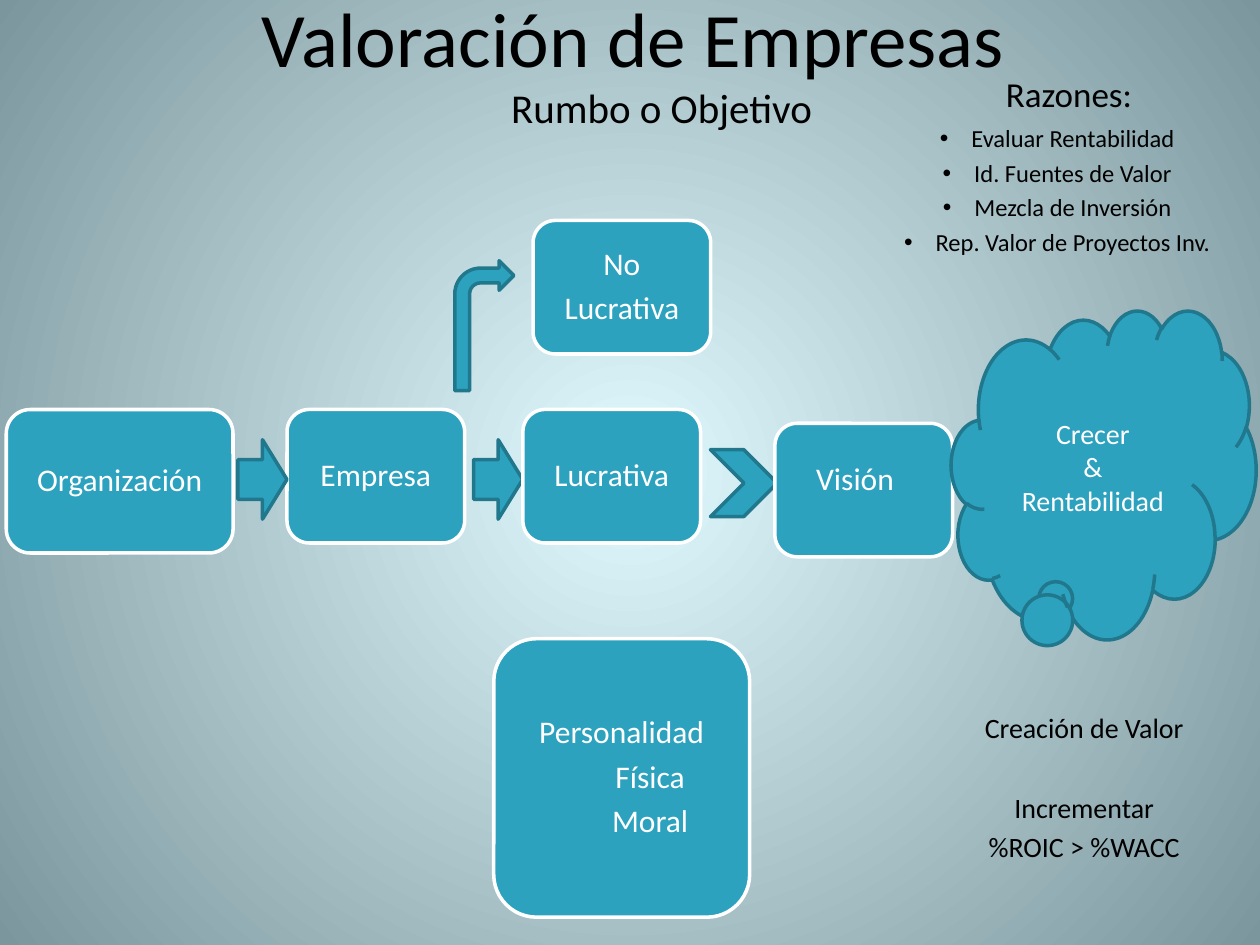
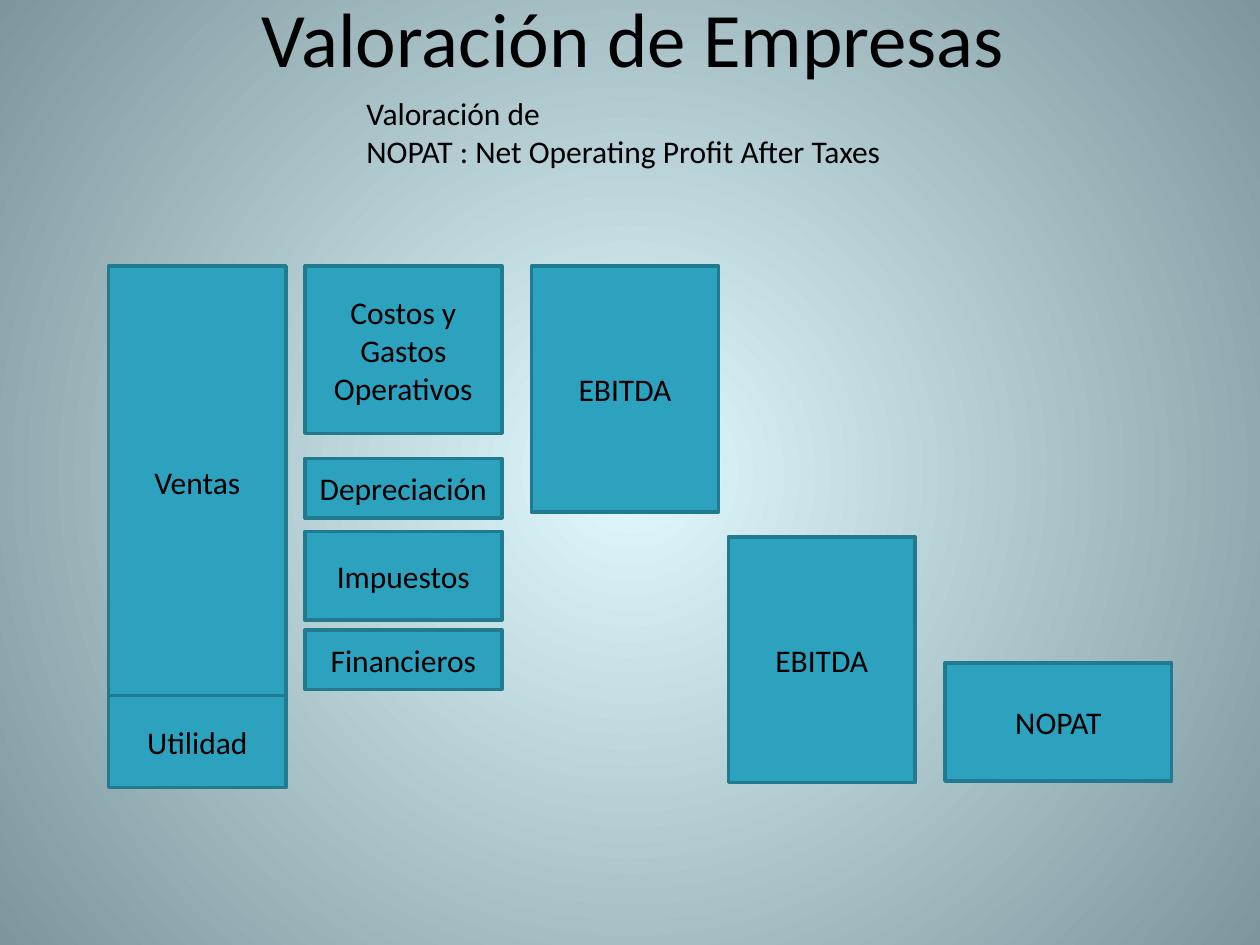
from pptx import Presentation
from pptx.dml.color import RGBColor
from pptx.enum.shapes import MSO_SHAPE
from pptx.enum.text import MSO_ANCHOR, PP_ALIGN
from pptx.oxml.ns import qn
from pptx.util import Pt
from lxml import etree

ROUND, RECT = MSO_SHAPE.ROUNDED_RECTANGLE, MSO_SHAPE.RECTANGLE
ARROW, BENT = MSO_SHAPE.RIGHT_ARROW, MSO_SHAPE.BENT_ARROW
CHEVRON, CLOUD = MSO_SHAPE.CHEVRON, MSO_SHAPE.CLOUD_CALLOUT
TOP, MIDDLE = MSO_ANCHOR.TOP, MSO_ANCHOR.MIDDLE
LEFT, CENTER = PP_ALIGN.LEFT, PP_ALIGN.CENTER
FONT = "Calibri"
HUES = {
    "glow": "E1FAFF", "edge": "7B969C", "teal": "2DA2BF",
    "rim": "21788D", "frame": "227A8F", "white": "FFFFFF", "black": "000000",
}
RGB = {name: RGBColor.from_string(hue) for name, hue in HUES.items()}


def write(item, lines, size, hue="black", align=CENTER, anchor=MIDDLE, lead=0.9, after=0):
    frame = item.text_frame
    frame.word_wrap = True
    frame.vertical_anchor = anchor
    for i, line in enumerate(lines):
        para = frame.paragraphs[0] if i == 0 else frame.add_paragraph()
        para.alignment = align
        para.line_spacing = lead
        para.space_after = Pt(after)
        run = para.add_run()
        run.text = line
        run.font.name = FONT
        run.font.size = Pt(size)
        run.font.color.rgb = RGB[hue]
    return frame


def draw(slide, kind, box, edge):
    item = slide.shapes.add_shape(kind, *map(Pt, box))
    item.shadow.inherit = False
    item.fill.solid()
    item.fill.fore_color.rgb = RGB["teal"]
    item.line.color.rgb = RGB[edge]
    item.line.width = Pt(2)
    return item


deck = Presentation()
deck.slide_width, deck.slide_height = Pt(720), Pt(540)

master = deck.slide_master
fill = master.background.fill
fill.gradient()
for stop, hue, place in zip(fill.gradient_stops, ("glow", "edge"), (0, 1)):
    stop.color.rgb = RGB[hue]
    stop.position = place
grad = next(master.element.iter(qn("a:gradFill")))
grad.remove(grad.find(qn("a:lin")))
focus = etree.SubElement(grad, qn("a:path"), path="circle")
etree.SubElement(focus, qn("a:fillToRect"), l="50000", t="50000", r="50000", b="50000")

slides = []
for _ in range(2):
    slide = deck.slides.add_slide(deck.slide_layouts[6])
    title = slide.shapes.add_textbox(Pt(56), Pt(-3.6), Pt(612), Pt(56))
    write(title, ["Valoración de Empresas"], 44)
    slides.append(slide)
goals, profit = slides

flow = [
    (ROUND, (3.6, 234, 129.6, 82), ["Organización"]),
    (ROUND, (164, 234, 101.5, 76.3), ["Empresa"]),
    (ARROW, (136, 251.3, 28, 45.4), []),
    (ARROW, (270.7, 251.3, 28, 45.4), []),
    (ROUND, (298.8, 234, 101.5, 76.3), ["Lucrativa"]),
    (ROUND, (282.2, 365, 146.2, 159.1), ["Personalidad", "Física", "Moral"]),
    (ROUND, (304.6, 126, 101.5, 76.3), ["No", "Lucrativa"]),
    (BENT, (259.9, 149, 33.8, 74.2), []),
    (CHEVRON, (406, 257, 38.2, 38.2), []),
    (ROUND, (442.8, 241.9, 101.5, 76.3), ["Visión"]),
]
for kind, box, lines in flow:
    item = draw(goals, kind, box, "white" if lines else "rim")
    if not lines:
        continue
    frame = write(item, lines, 18, "white", after=6)
    if lines == ["Visión"]:
        frame.margin_right, frame.margin_bottom = Pt(17), Pt(15)
    if len(lines) == 3:
        for para in frame.paragraphs[1:]:
            para._p.get_or_add_pPr().set("marL", str(Pt(32.5)))

cloud = draw(goals, CLOUD, (543.6, 177.1, 174.2, 187.9), "rim")
cloud.adjustments[0], cloud.adjustments[1] = -0.15, 0.36
write(cloud, ["Crecer", "&", "Rentabilidad"], 16, "white", lead=1)

value = goals.shapes.add_textbox(Pt(540.7), Pt(404.6), Pt(157.7), Pt(97.2))
frame = write(value, ["Creación de Valor", "Incrementar", "%ROIC > %WACC"], 16, anchor=TOP, after=5.4)
frame.paragraphs[0].space_after = Pt(28.4)

aim = goals.shapes.add_textbox(Pt(80), Pt(46), Pt(596), Pt(34))
write(aim, ["Rumbo o Objetivo"], 23.4)

reasons = [
    "Razones:", "Evaluar Rentabilidad", "Id. Fuentes de Valor",
    "Mezcla de Inversión", "Rep. Valor de Proyectos Inv.",
]
why = goals.shapes.add_textbox(Pt(504), Pt(40.3), Pt(213.8), Pt(116.6))
frame = write(why, reasons, 14, anchor=TOP, after=4.7)
head, *points = frame.paragraphs
head.runs[0].font.size = Pt(20)
head.space_after = Pt(6.6)
for para in points:
    props = para._p.get_or_add_pPr()
    props.set("marL", str(Pt(18)))
    props.set("marR", str(Pt(13.5)))
    props.set("indent", str(Pt(-18)))
    etree.SubElement(props, qn("a:buFont"), typeface="Arial")
    etree.SubElement(props, qn("a:buChar"), char="•")

note = profit.shapes.add_textbox(Pt(202.3), Pt(50.4), Pt(315.4), Pt(51))
lines = ["Valoración de", "NOPAT : Net Operating Profit After Taxes"]
write(note, lines, 18, align=LEFT, anchor=TOP, lead=1).word_wrap = False

stacks = [
    (62, 101.5, [("Ventas", 152, 247), ("Utilidad", 397.5, 52.5)]),
    (174.2, 112.6, [
        ("Costos y Gastos Operativos", 152, 95.6), ("Depreciación", 262, 34),
        ("Impuestos", 303.8, 50.5), ("Financieros", 360, 34),
    ]),
    (303.8, 106.8, [("EBITDA", 152, 140.5)]),
    (416.2, 106.8, [("EBITDA", 306.8, 140.5)]),
    (540, 129.6, [("NOPAT", 378.8, 67.5)]),
]
for left, width, bars in stacks:
    for label, top, height in bars:
        bar = draw(profit, RECT, (left, top, width, height), "frame")
        write(bar, [label], 18, lead=1)

deck.save("out.pptx")
